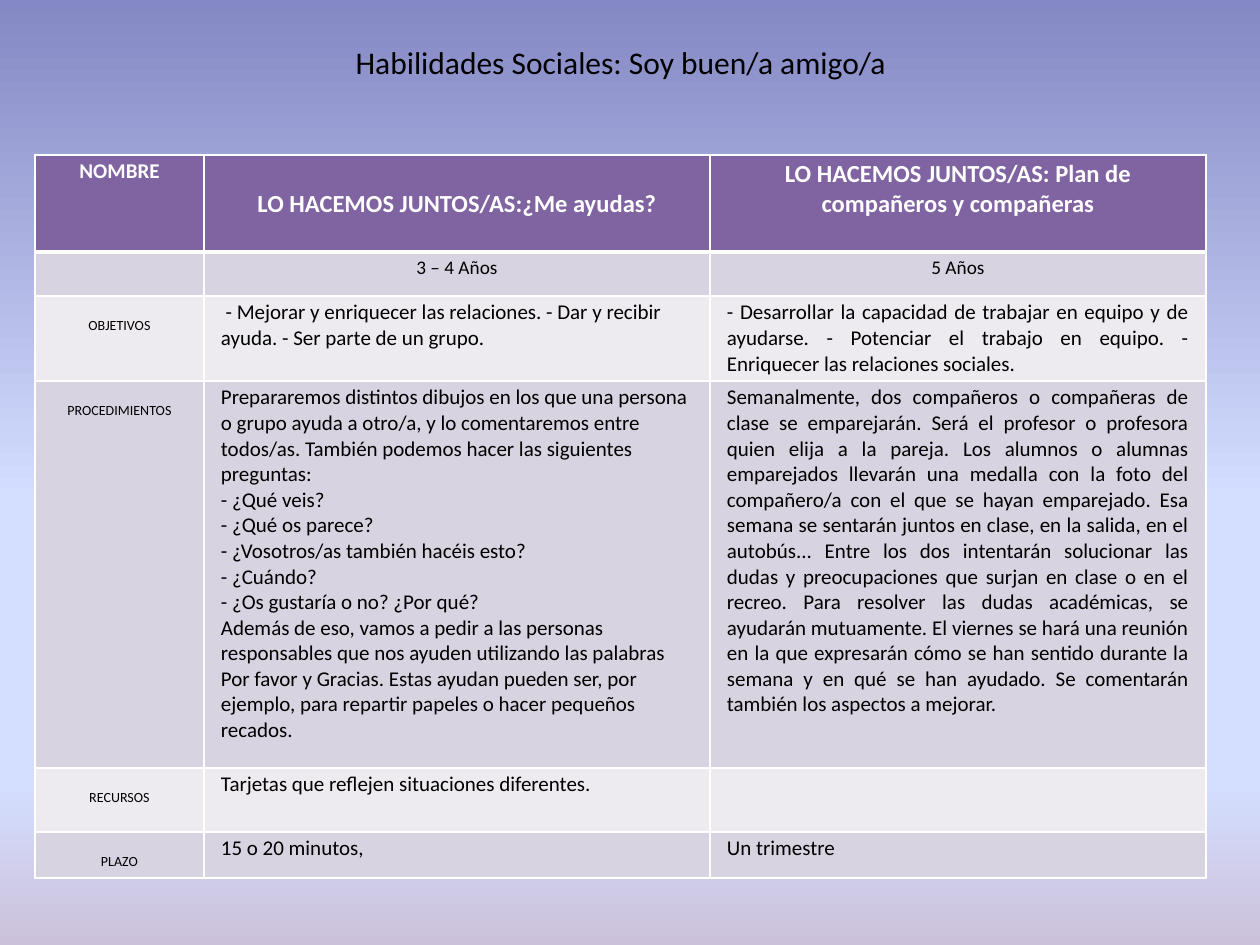
from copy import deepcopy

from lxml.etree import SubElement
from pptx import Presentation
from pptx.dml.color import RGBColor
from pptx.enum.text import MSO_ANCHOR as Anchor, PP_ALIGN as Align
from pptx.oxml.ns import qn
from pptx.util import Pt

PX = 914400 // 126
FONT = "Calibri"
BLACK = RGBColor(0x00, 0x00, 0x00)
WHITE = RGBColor(0xFF, 0xFF, 0xFF)
PURPLE = RGBColor(0x80, 0x64, 0xA2)
BANDS = [RGBColor(0xD8, 0xD3, 0xE0), RGBColor(0xED, 0xEA, 0xF0)]
SKY = [
    (0, RGBColor(0x84, 0x88, 0xC4)),
    (0.53, RGBColor(0xD4, 0xDE, 0xFF)),
    (0.83, RGBColor(0xD4, 0xDE, 0xFF)),
    (1, RGBColor(0xCC, 0xC1, 0xDA)),
]

# Content
TITLE = "Habilidades Sociales: Soy buen/a amigo/a"
ROWS = [
    ("NOMBRE",
     "LO HACEMOS JUNTOS/AS:¿Me ayudas?",
     "LO HACEMOS JUNTOS/AS: Plan de compañeros y compañeras"),
    ("", "3 – 4 Años", "5 Años"),
    ("OBJETIVOS",
     " - Mejorar y enriquecer las relaciones. - Dar y recibir ayuda. "
     "- Ser parte de un grupo.",
     "- Desarrollar la capacidad de trabajar en equipo y de ayudarse. "
     "- Potenciar el trabajo en equipo. - Enriquecer las relaciones sociales."),
    ("PROCEDIMIENTOS",
     "Prepararemos distintos dibujos en los que una persona o grupo ayuda a "
     "otro/a, y lo comentaremos entre todos/as. También podemos hacer las "
     "siguientes preguntas:\n"
     "- ¿Qué veis?\n"
     "- ¿Qué os parece?\n"
     "- ¿Vosotros/as también hacéis esto?\n"
     "- ¿Cuándo?\n"
     "- ¿Os gustaría o no? ¿Por qué?\n"
     "Además de eso, vamos a pedir a las personas responsables que nos ayuden "
     "utilizando las palabras Por favor y Gracias. Estas ayudan pueden ser, por "
     "ejemplo, para repartir papeles o hacer pequeños recados.",
     "Semanalmente, dos compañeros o compañeras de clase se emparejarán. Será "
     "el profesor o profesora quien elija a la pareja. Los alumnos o alumnas "
     "emparejados llevarán una medalla con la foto del compañero/a con el que "
     "se hayan emparejado. Esa semana se sentarán juntos en clase, en la salida, "
     "en el autobús... Entre los dos intentarán solucionar las dudas y "
     "preocupaciones que surjan en clase o en el recreo. Para resolver las dudas "
     "académicas, se ayudarán mutuamente. El viernes se hará una reunión en la "
     "que expresarán cómo se han sentido durante la semana y en qué se han "
     "ayudado. Se comentarán también los aspectos a mejorar."),
    ("RECURSOS", "Tarjetas que reflejen situaciones diferentes.", ""),
    ("PLAZO", "15 o 20 minutos,", "Un trimestre"),
]
COLUMN_WIDTHS = [169, 506, 496]
ROW_HEIGHTS = [97, 44, 85, 387, 64, 46]
TABLE_LEFT, TABLE_TOP = 35, 155
JUSTIFIED = [(2, 2), (3, 2)]
SIDE_MARGIN, EDGE_MARGIN = 17, 4
HEADING_DROP, LABEL_DROP = 30, 17


def apply(target, formats):
    for name, value in formats.items():
        setattr(target, name, value)


def format_text(para, size, color, bold=False):
    apply(para.font, {"size": Pt(size), "name": FONT, "bold": bold})
    for span in para.runs:
        apply(span.font, {"size": Pt(size), "name": FONT, "bold": bold})
        span.font.color.rgb = color
    if not para.runs:
        para._p.get_or_add_endParaRPr().set("sz", str(size * 100))


def text_style(row, column):
    """Size, alignment and extra space above the text of a cell."""
    if row == 0:
        return (14 if column else 12), Align.CENTER, HEADING_DROP * (column == 1)
    if row == 1:
        return 11, Align.CENTER, 0
    if column == 0:
        return 8, Align.CENTER, LABEL_DROP
    return 12, Align.JUSTIFY if (row, column) in JUSTIFIED else Align.LEFT, 0


def draw_borders(cell, row):
    widths = {"lnL": 1, "lnR": 1, "lnT": 3 if row == 1 else 1, "lnB": 3 if row == 0 else 1}
    properties = cell._tc.get_or_add_tcPr()
    for tag, width in widths.items():
        line = SubElement(properties, qn(f"a:{tag}"), w=str(Pt(width)))
        fill = SubElement(line, qn("a:solidFill"))
        SubElement(fill, qn("a:srgbClr"), val=str(WHITE))


def fill_cell(cell, row, column, text):
    size, align, drop = text_style(row, column)
    apply(cell, {
        "text": text,
        "margin_left": SIDE_MARGIN * PX, "margin_right": SIDE_MARGIN * PX,
        "margin_top": (EDGE_MARGIN + drop) * PX, "margin_bottom": EDGE_MARGIN * PX,
        "vertical_anchor": Anchor.TOP,
    })
    for para in cell.text_frame.paragraphs:
        para.alignment = align
        format_text(para, size, BLACK if row else WHITE, bold=row == 0)
    draw_borders(cell, row)
    cell.fill.solid()
    cell.fill.fore_color.rgb = BANDS[(row - 1) % 2] if row else PURPLE


deck = Presentation()
apply(deck, {"slide_width": 1260 * PX, "slide_height": 945 * PX})
page = deck.slides.add_slide(deck.slide_layouts[5])

# Background gradient
sky = page.background.fill
sky.gradient()
sky.gradient_angle = 270
stop_list = page.element.find(".//" + qn("a:gsLst"))
while len(stop_list) < len(SKY):
    stop_list.append(deepcopy(stop_list[0]))
for stop, (position, color) in zip(sky.gradient_stops, SKY):
    stop.position = position
    stop.color.rgb = color

# Title
title = page.shapes.title
apply(title, {"left": 343 * PX, "top": 37 * PX, "width": 605 * PX, "height": 50 * PX})
title.text_frame.text = TITLE
title.text_frame.paragraphs[0].alignment = Align.LEFT
format_text(title.text_frame.paragraphs[0], 18, BLACK)

# Activity table
table = page.shapes.add_table(
    len(ROWS), len(COLUMN_WIDTHS), TABLE_LEFT * PX, TABLE_TOP * PX,
    sum(COLUMN_WIDTHS) * PX, sum(ROW_HEIGHTS) * PX).table
for column, width in zip(table.columns, COLUMN_WIDTHS):
    column.width = width * PX
for line, height in zip(table.rows, ROW_HEIGHTS):
    line.height = height * PX
for row, texts in enumerate(ROWS):
    for column, text in enumerate(texts):
        fill_cell(table.cell(row, column), row, column, text)

deck.save("out.pptx")
